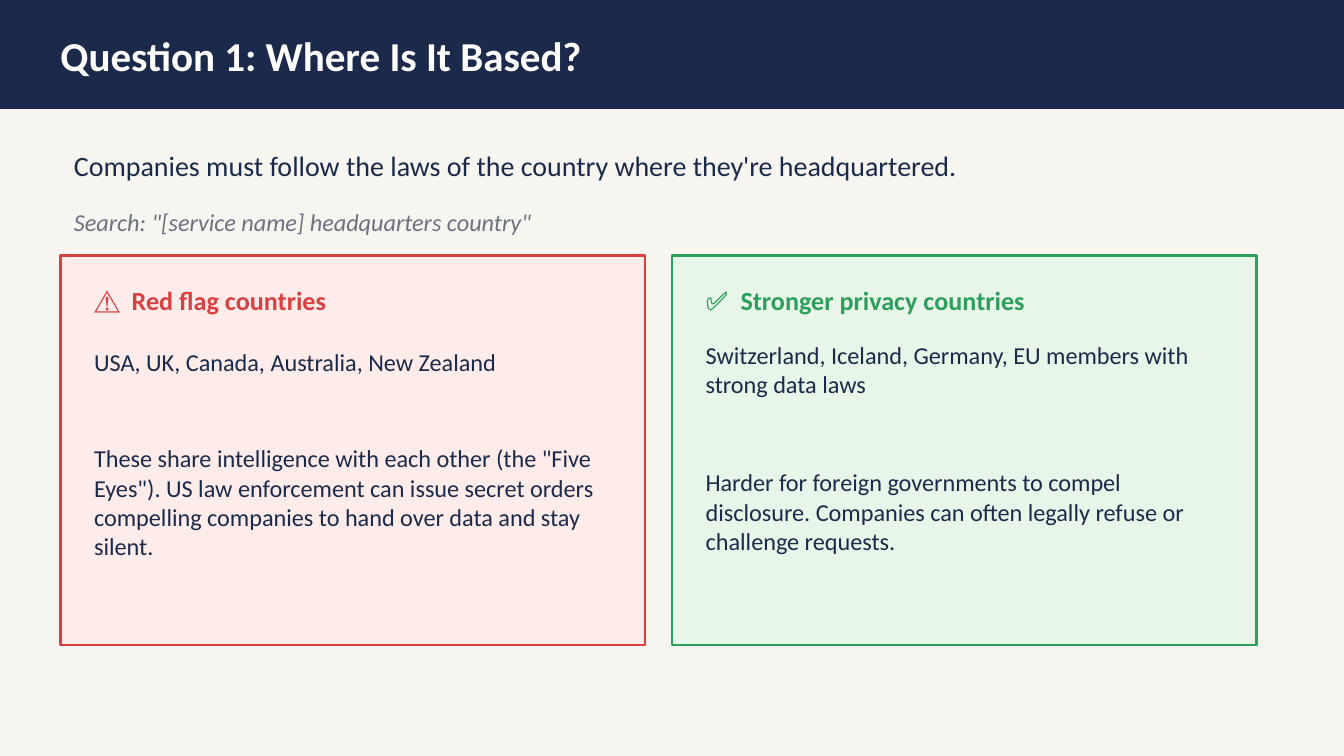
"""Build the slide that asks where a service is based."""
import dataclasses

import lxml.etree
import pptx
import pptx.dml.color
import pptx.enum.shapes
import pptx.enum.text
import pptx.oxml.ns
import pptx.util

Inches = pptx.util.Inches


@dataclasses.dataclass(frozen=True)
class Theme:
    """Hold the colours, font and type sizes."""
    font: str = "Calibri"
    navy: str = "1B2A4A"
    white: str = "FFFFFF"
    cream: str = "F7F5F0"
    grey: str = "6B7280"
    red: str = "D94040"
    pale_red: str = "FDECEA"
    green: str = "2E9E5B"
    pale_green: str = "E8F5E9"
    title: int = 22
    lead: int = 15
    heading: int = 14
    body: int = 13


class SlideWriter:
    """Draw styled elements on the current slide."""

    def __init__(self, slide, theme):
        self.slide = slide
        self.theme = theme

    def panel(self, left, top, width, height, fill, line, weight=1):
        shape = self.slide.shapes.add_shape(
            pptx.enum.shapes.MSO_SHAPE.RECTANGLE,
            Inches(left), Inches(top), Inches(width), Inches(height))
        shape.shadow.inherit = False
        shape.fill.solid()
        shape.fill.fore_color.rgb = pptx.dml.color.RGBColor.from_string(fill)
        shape.line.color.rgb = pptx.dml.color.RGBColor.from_string(line)
        shape.line.width = pptx.util.Pt(weight)

    def text(self, left, top, width, height, runs, size, color,
             bold=False, italic=False, inset=0.05):
        box = self.slide.shapes.add_textbox(
            Inches(left), Inches(top), Inches(width), Inches(height))
        frame = box.text_frame
        frame.word_wrap = True
        frame.vertical_anchor = pptx.enum.text.MSO_ANCHOR.MIDDLE
        frame.margin_left = frame.margin_right = Inches(inset)
        frame.margin_top = frame.margin_bottom = Inches(inset)
        para = frame.paragraphs[0]
        for words in runs:
            span = para.add_run()
            span.text = words
            span.font.name = self.theme.font
            span.font.size = pptx.util.Pt(size)
            span.font.bold = bold
            span.font.italic = italic
            span.font.color.rgb = pptx.dml.color.RGBColor.from_string(color)
        return para

    def tab_stop(self, para, position):
        qn = pptx.oxml.ns.qn
        properties = para._p.get_or_add_pPr()
        stops = lxml.etree.SubElement(properties, qn("a:tabLst"))
        lxml.etree.SubElement(stops, qn("a:tab"), pos=str(Inches(position)), algn="l")

    def card(self, left, icon, heading, label_offset, notes, fill, accent):
        theme = self.theme
        self.panel(left, 1.9, 4.35, 2.9, fill, accent, 1.5)
        text_left, text_width = left + 0.2, 3.95
        para = self.text(text_left, 2.07, text_width, 0.32, [icon, "\t", heading],
                         theme.heading, accent, bold=True)
        self.tab_stop(para, label_offset)
        for top, height, words in notes:
            self.text(text_left, top, text_width, height, [words],
                      theme.body, theme.navy)


def main():
    deck = pptx.Presentation()
    deck.slide_width, deck.slide_height = Inches(10), Inches(10 * 9 / 16)
    theme = Theme()
    page = SlideWriter(deck.slides.add_slide(deck.slide_layouts[6]), theme)

    page.panel(0, 0, 10, 0.82, theme.navy, theme.navy)
    page.text(0.45, 0.25, 9.55, 0.32, ["Question 1: Where Is It Based?"],
              theme.title, theme.white, bold=True, inset=0)
    page.panel(0, 0.82, 10, 4.8, theme.cream, theme.cream)
    page.text(0.5, 1.08, 9, 0.3,
              ["Companies must follow the laws of the country where they're headquartered."],
              theme.lead, theme.navy)
    page.text(0.5, 1.51, 9, 0.28, ['Search: "[service name] headquarters country"'],
              theme.body, theme.grey, italic=True)

    page.card(0.45, "⚠", "Red flag countries", 0.28, [
        (2.55, 0.28, "USA, UK, Canada, Australia, New Zealand"),
        (3.26, 0.95, 'These share intelligence with each other (the "Five Eyes"). '
                     "US law enforcement can issue secret orders compelling companies "
                     "to hand over data and stay silent."),
    ], theme.pale_red, theme.red)
    page.card(5, "✅", "Stronger privacy countries", 0.26, [
        (2.5, 0.5, "Switzerland, Iceland, Germany, EU members with strong data laws"),
        (3.44, 0.73, "Harder for foreign governments to compel disclosure. "
                     "Companies can often legally refuse or challenge requests."),
    ], theme.pale_green, theme.green)

    deck.save("out.pptx")


if __name__ == "__main__":
    main()
